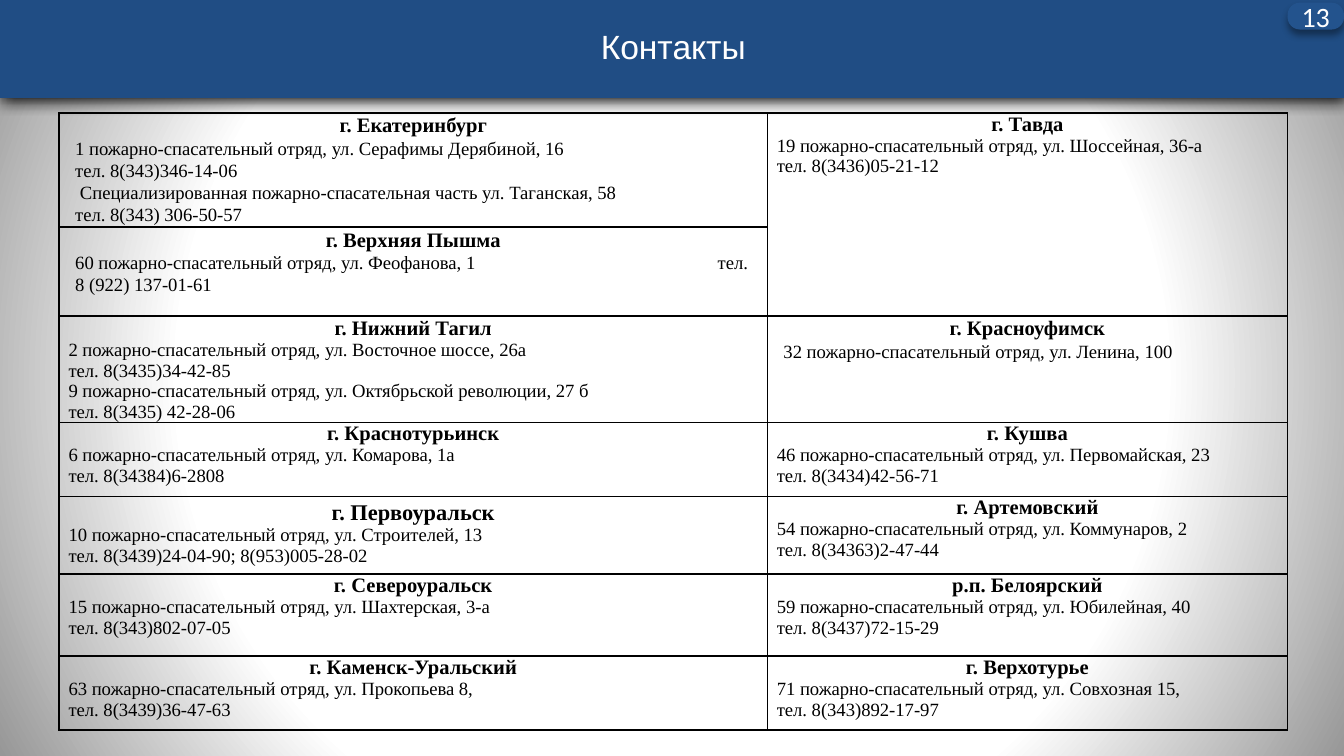
"""Build the contacts slide: a title banner, a page badge and a table of fire brigades by city."""
from dataclasses import dataclass

from pptx import Presentation
from pptx.dml.color import RGBColor
from pptx.enum.shapes import MSO_SHAPE
from pptx.enum.text import MSO_ANCHOR, PP_ALIGN
from pptx.oxml import parse_xml
from pptx.oxml.ns import nsdecls
from pptx.util import Inches, Pt

BANNER_BLUE = RGBColor(0x20, 0x4D, 0x84)
BADGE_BLUE = RGBColor(0x23, 0x53, 0x8D)
WHITE = RGBColor(0xFF, 0xFF, 0xFF)
BLACK = RGBColor(0, 0, 0)
GREY = RGBColor(0x97, 0x97, 0x97)

COLUMN_WIDTHS = (5.27, 3.87)
ROW_HEIGHTS = (0.85, 0.66, 0.79, 0.55, 0.58, 0.61, 0.55)
PHONE_TAB = 4.78


@dataclass
class Panel:
    text: str
    preset: MSO_SHAPE
    box: tuple[float, float, float, float]
    fill: RGBColor
    font: str
    size: float
    shadow_blur: float
    shadow_distance: float
    shadow_alpha: int


@dataclass
class Contact:
    city: str
    lines: tuple[str, ...]
    margin: float = 0.07
    spacing: float = 1.0
    city_size: float = 11
    top: float = 0


BANNER = Panel("Контакты", MSO_SHAPE.RECTANGLE, (0, -0.04, 10.02, 0.77),
               BANNER_BLUE, "Arial", 18, 8.5, 1, 100)
BADGE = Panel("13", MSO_SHAPE.ROUNDED_RECTANGLE, (9.58, 0.02, 0.42, 0.2),
              BADGE_BLUE, "Calibri", 15, 4, 3, 40)

CONTACTS = (
    (Contact("г. Екатеринбург", (
        "1 пожарно-спасательный отряд, ул. Серафимы Дерябиной, 16",
        "тел. 8(343)346-14-06",
        " Специализированная пожарно-спасательная часть ул. Таганская, 58",
        "тел. 8(343) 306-50-57"), margin=0.12, spacing=1.07),
     Contact("г. Тавда", (
         "19 пожарно-спасательный отряд, ул. Шоссейная, 36-а",
         "тел. 8(3436)05-21-12"))),
    (Contact("г. Верхняя Пышма", (
        "60 пожарно-спасательный отряд, ул. Феофанова, 1\tтел. 8 (922) 137-01-61",),
        margin=0.12, spacing=1.07),
     None),
    (Contact("г. Нижний Тагил", (
        "2 пожарно-спасательный отряд, ул. Восточное шоссе, 26а",
        "тел. 8(3435)34-42-85",
        "9 пожарно-спасательный отряд, ул. Октябрьской революции, 27 б",
        "тел. 8(3435) 42-28-06"), top=0.01),
     Contact("г. Красноуфимск", (
         "32 пожарно-спасательный отряд, ул. Ленина, 100",), margin=0.12, spacing=1.07)),
    (Contact("г. Краснотурьинск", (
        "6 пожарно-спасательный отряд, ул. Комарова, 1а",
        "тел. 8(34384)6-2808")),
     Contact("г. Кушва", (
         "46 пожарно-спасательный отряд, ул. Первомайская, 23",
         "тел. 8(3434)42-56-71"))),
    (Contact("г. Первоуральск", (
        "10 пожарно-спасательный отряд, ул. Строителей, 13",
        "тел. 8(3439)24-04-90; 8(953)005-28-02"), city_size=12, top=0.03),
     Contact("г. Артемовский", (
         "54 пожарно-спасательный отряд, ул. Коммунаров, 2",
         "тел. 8(34363)2-47-44"))),
    (Contact("г. Североуральск", (
        "15 пожарно-спасательный отряд, ул. Шахтерская, 3-а",
        "тел. 8(343)802-07-05")),
     Contact("р.п. Белоярский", (
         "59 пожарно-спасательный отряд, ул. Юбилейная, 40",
         "тел. 8(3437)72-15-29"))),
    (Contact("г. Каменск-Уральский", (
        "63 пожарно-спасательный отряд, ул. Прокопьева 8,",
        "тел. 8(3439)36-47-63")),
     Contact("г. Верхотурье", (
         "71 пожарно-спасательный отряд, ул. Совхозная 15,",
         "тел. 8(343)892-17-97"))),
)


def paint_background(slide) -> None:
    properties = slide.element.cSld.get_or_add_bgPr()
    gradient = parse_xml(
        f'<a:gradFill {nsdecls("a")} rotWithShape="1"><a:gsLst>'
        f'<a:gs pos="64000"><a:srgbClr val="{WHITE}"/></a:gs>'
        f'<a:gs pos="100000"><a:srgbClr val="{GREY}"><a:alpha val="61000"/></a:srgbClr></a:gs>'
        '</a:gsLst><a:path path="circle">'
        '<a:fillToRect l="50000" t="50000" r="50000" b="50000"/></a:path></a:gradFill>')
    properties.replace(properties[0], gradient)


def style_paragraph(paragraph, font: str, size: float, color: RGBColor, bold: bool = False) -> None:
    paragraph.font.name = font
    paragraph.font.size = Pt(size)
    paragraph.font.bold = bold
    paragraph.font.color.rgb = color


def draw_panel(slide, panel: Panel) -> None:
    shape = slide.shapes.add_shape(panel.preset, *map(Inches, panel.box))
    if panel.preset == MSO_SHAPE.ROUNDED_RECTANGLE:
        shape.adjustments[0] = 0.46
    shape.fill.solid()
    shape.fill.fore_color.rgb = panel.fill
    shape.line.fill.background()
    shape.shadow.inherit = False
    effects = shape.element.spPr.find("{*}effectLst")
    effects.append(parse_xml(
        f'<a:outerShdw {nsdecls("a")} blurRad="{Pt(panel.shadow_blur)}" '
        f'dist="{Pt(panel.shadow_distance)}" dir="5400000" rotWithShape="0">'
        f'<a:srgbClr val="{BLACK}"><a:alpha val="{panel.shadow_alpha * 1000}"/></a:srgbClr>'
        '</a:outerShdw>'))
    frame = shape.text_frame
    frame.word_wrap = panel is BANNER
    frame.vertical_anchor = MSO_ANCHOR.MIDDLE
    frame.margin_left = frame.margin_right = Inches(0.08)
    frame.margin_top = frame.margin_bottom = Inches(0.04)
    title = frame.paragraphs[0]
    title.text = panel.text
    title.alignment = PP_ALIGN.CENTER
    style_paragraph(title, panel.font, panel.size, WHITE)


def outline_cell(cell) -> None:
    cell.fill.background()
    properties = cell._tc.get_or_add_tcPr()
    for index, side in enumerate("LRTB"):
        properties.insert(index, parse_xml(
            f'<a:ln{side} {nsdecls("a")} w="{Pt(1)}"><a:solidFill>'
            f'<a:srgbClr val="{BLACK}"/></a:solidFill></a:ln{side}>'))


def write_contact(cell, contact: Contact) -> None:
    cell.margin_left = cell.margin_right = Inches(contact.margin)
    cell.margin_top = Inches(contact.top)
    cell.margin_bottom = 0
    frame = cell.text_frame
    city = frame.paragraphs[0]
    city.text = contact.city
    city.alignment = PP_ALIGN.CENTER
    city.line_spacing = contact.spacing
    style_paragraph(city, "Times New Roman", contact.city_size, BLACK, bold=True)
    for line in contact.lines:
        detail = frame.add_paragraph()
        detail.text = line
        detail.alignment = PP_ALIGN.LEFT
        detail.line_spacing = contact.spacing
        style_paragraph(detail, "Times New Roman", 10, BLACK)
        if "\t" in line:
            detail._p.get_or_add_pPr().insert_element_before(parse_xml(
                f'<a:tabLst {nsdecls("a")}><a:tab pos="{Inches(PHONE_TAB)}" algn="l"/></a:tabLst>'),
                "a:defRPr", "a:extLst")


def draw_contacts(slide) -> None:
    table = slide.shapes.add_table(
        len(ROW_HEIGHTS), len(COLUMN_WIDTHS), Inches(0.44), Inches(0.84),
        Inches(sum(COLUMN_WIDTHS)), Inches(sum(ROW_HEIGHTS))).table
    table.first_row = table.horz_banding = False
    for column, width in zip(table.columns, COLUMN_WIDTHS):
        column.width = Inches(width)
    for row, height in zip(table.rows, ROW_HEIGHTS):
        row.height = Inches(height)
    table.cell(0, 1).merge(table.cell(1, 1))
    for row, contacts in zip(table.rows, CONTACTS):
        for cell, contact in zip(row.cells, contacts):
            outline_cell(cell)
            if contact:
                write_contact(cell, contact)


def main() -> None:
    presentation = Presentation()
    presentation.slide_width = Inches(10)
    presentation.slide_height = Inches(10 * 9 / 16)
    slide = presentation.slides.add_slide(presentation.slide_layouts[6])
    paint_background(slide)
    draw_panel(slide, BANNER)
    draw_panel(slide, BADGE)
    draw_contacts(slide)
    presentation.save("out.pptx")


if __name__ == "__main__":
    main()
